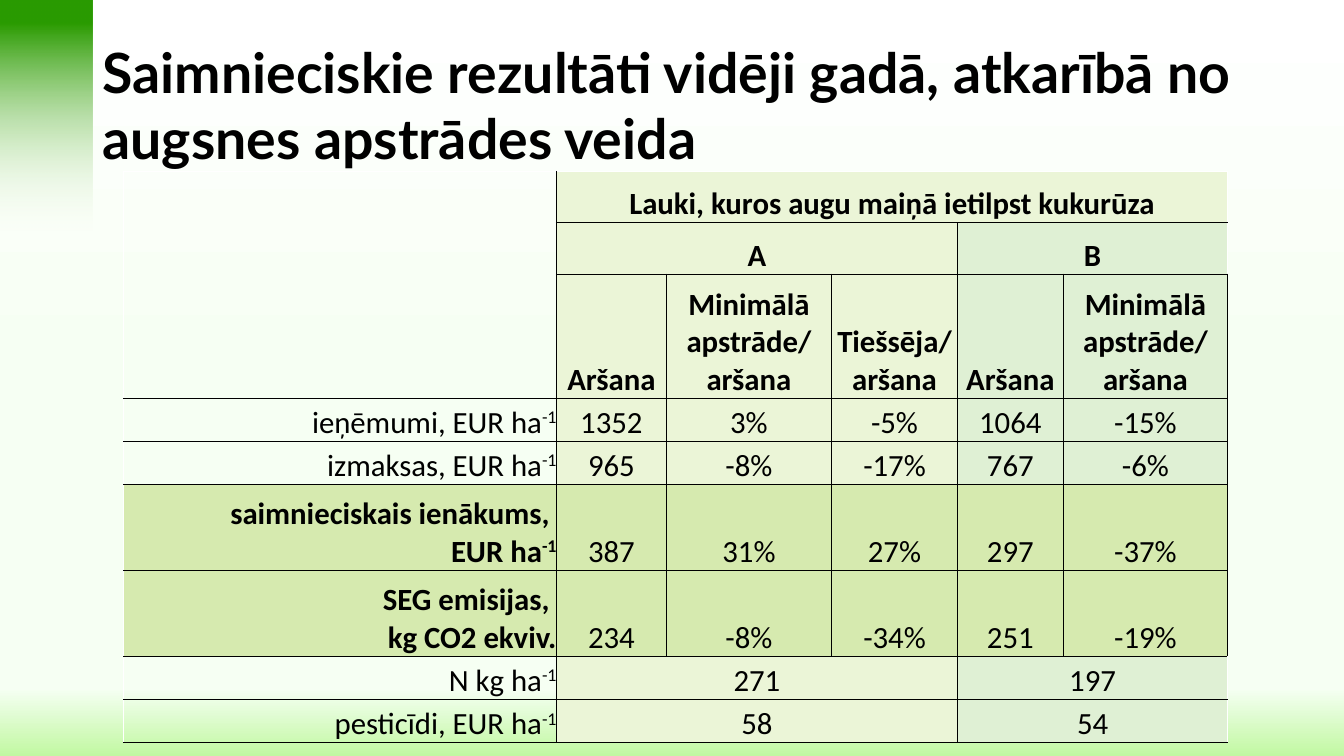
from lxml import etree
from pptx import Presentation
from pptx.dml.color import RGBColor
from pptx.enum import shapes, text
from pptx.oxml import ns
from pptx.util import Pt

TITLE = "Saimnieciskie rezultāti vidēji gadā, atkarībā no augsnes apstrādes veida"
ROWS = [
    ["", "Lauki, kuros augu maiņā ietilpst kukurūza", "", "", "", ""],
    ["", "A", "", "", "B", ""],
    ["", "Aršana", "Minimālā apstrāde/ aršana", "Tiešsēja/ aršana", "Aršana", "Minimālā apstrāde/ aršana"],
    ["ieņēmumi, EUR ha^-1", "1352", "3%", "-5%", "1064", "-15%"],
    ["izmaksas, EUR ha^-1", "965", "-8%", "-17%", "767", "-6%"],
    ["saimnieciskais ienākums, \nEUR ha^-1", "387", "31%", "27%", "297", "-37%"],
    ["SEG emisijas, \nkg CO2 ekviv.", "234", "-8%", "-34%", "251", "-19%"],
    ["N kg ha^-1", "271", "", "", "197", ""],
    ["pesticīdi, EUR ha^-1", "58", "", "", "54", ""],
]
COLUMN_WIDTHS = [309, 78.5, 118, 90, 75.5, 117.5]
ROW_HEIGHTS = [36.7, 36.7, 88.6, 30.8, 30.8, 61.4, 61.4, 30.8, 30.8]
HEADER_ROWS = 3
HIGHLIGHT_ROWS = (5, 6)
SPLIT_ROWS = (1, 7, 8)
MERGES = [(0, 0, 2, 0), (0, 1, 0, 5)]
MERGES += [(row, *columns) for row in SPLIT_ROWS for columns in ((1, row, 3), (4, row, 5))]
FIELD_A, FIELD_B, HIGHLIGHT = "EBF5D7", "DFF0D4", "D6EAAF"
BLACK, WHITE = "000000", "FFFFFF"
PAGE_STOPS = [(0, WHITE, 100), (50, "F6FFF3", 100), (91, "F6FFF3", 100), (100, "C1F8A2", 100)]
BAND_STOPS = [(10, "2A9B00", 100), (100, "ECF9DF", 0)]


def color(value):
    return RGBColor.from_string(value)


def set_font(font, name, size, bold):
    font.name, font.size, font.bold = name, Pt(size), bold
    font.color.rgb = color(BLACK)


def add_child(parent, tag, **attributes):
    return etree.SubElement(parent, ns.qn(tag), attributes)


def paint_gradient(fill, element, stops):
    fill.gradient()
    gradient = next(element.iter(ns.qn("a:gradFill")))
    for child in list(gradient):
        gradient.remove(child)
    stop_list = add_child(gradient, "a:gsLst")
    for position, value, opacity in stops:
        stop = add_child(stop_list, "a:gs", pos=str(position * 1000))
        tint = add_child(stop, "a:srgbClr", val=value)
        if opacity < 100:
            add_child(tint, "a:alpha", val=str(opacity * 1000))
    add_child(gradient, "a:lin", ang="5400000", scaled="0")


def draw_borders(cell, row, column):
    top, left, bottom, right = next(
        (area for area in MERGES if area[0] <= row <= area[2] and area[1] <= column <= area[3]),
        (row, column, row, column))
    open_right = column == len(COLUMN_WIDTHS) - 1 and row in (0, *SPLIT_ROWS)
    sides = [
        ("a:lnL", column == left, column == 0),
        ("a:lnR", column == right, open_right),
        ("a:lnT", row == top, row == 0),
        ("a:lnB", row == bottom, False),
    ]
    properties = cell._tc.get_or_add_tcPr()
    for tag, on_edge, pale in sides:
        if on_edge:
            line = add_child(properties, tag, w=str(Pt(1)))
            solid = add_child(line, "a:solidFill")
            add_child(solid, "a:srgbClr", val=WHITE if pale else BLACK)


def fill_cell(cell, row, column):
    if row in HIGHLIGHT_ROWS:
        value = HIGHLIGHT
    elif column == 0:
        value = None
    else:
        value = FIELD_B if column > 3 and row > 0 else FIELD_A
    if value:
        cell.fill.solid()
        cell.fill.fore_color.rgb = color(value)
    else:
        cell.fill.background()


def write_cell(cell, row, column):
    cell.margin_left = cell.margin_right = cell.margin_top = cell.margin_bottom = 0
    cell.vertical_anchor = text.MSO_ANCHOR.BOTTOM
    para = cell.text_frame.paragraphs[0]
    para.alignment = text.PP_ALIGN.CENTER if column else text.PP_ALIGN.RIGHT
    bold = row < HEADER_ROWS or (column == 0 and row in HIGHLIGHT_ROWS)
    set_font(para.font, "Calibri", 22, bold)
    base, _, power = ROWS[row][column].partition("^")
    for number, line in enumerate(base.split("\n")):
        if number:
            para.add_line_break()
        if line:
            para.add_run().text = line
    if power:
        span = para.add_run()
        span.text = power
        span._r.get_or_add_rPr().set("baseline", "30000")


def main():
    deck = Presentation()
    deck.slide_width, deck.slide_height = Pt(960), Pt(540)
    page = deck.slides.add_slide(deck.slide_layouts[5])
    paint_gradient(page.background.fill, page.element, PAGE_STOPS)

    band = page.shapes.add_shape(shapes.MSO_SHAPE.RECTANGLE, Pt(-2), 0, Pt(68), Pt(165))
    band.shadow.inherit = False
    band.line.fill.background()
    paint_gradient(band.fill, band.element, BAND_STOPS)

    title = page.shapes.title
    title.left, title.top, title.width, title.height = Pt(66), Pt(21.5), Pt(864), Pt(106)
    frame = title.text_frame
    frame.text = TITLE
    frame.word_wrap = True
    frame.auto_size = text.MSO_AUTO_SIZE.NONE
    frame.vertical_anchor = text.MSO_ANCHOR.MIDDLE
    frame.paragraphs[0].alignment = text.PP_ALIGN.LEFT
    set_font(frame.paragraphs[0].font, "Lato", 39.6, True)

    table = page.shapes.add_table(
        len(ROWS), len(COLUMN_WIDTHS), Pt(88.5), Pt(122.5),
        Pt(sum(COLUMN_WIDTHS)), Pt(sum(ROW_HEIGHTS))).table
    table.first_row = table.horz_banding = False
    for column, width in zip(table.columns, COLUMN_WIDTHS):
        column.width = Pt(width)
    for row, height in zip(table.rows, ROW_HEIGHTS):
        row.height = Pt(height)
    for top, left, bottom, right in MERGES:
        table.cell(top, left).merge(table.cell(bottom, right))
    for row in range(len(ROWS)):
        for column in range(len(COLUMN_WIDTHS)):
            cell = table.cell(row, column)
            draw_borders(cell, row, column)
            fill_cell(cell, row, column)
            write_cell(cell, row, column)

    deck.save("out.pptx")


if __name__ == "__main__":
    main()
